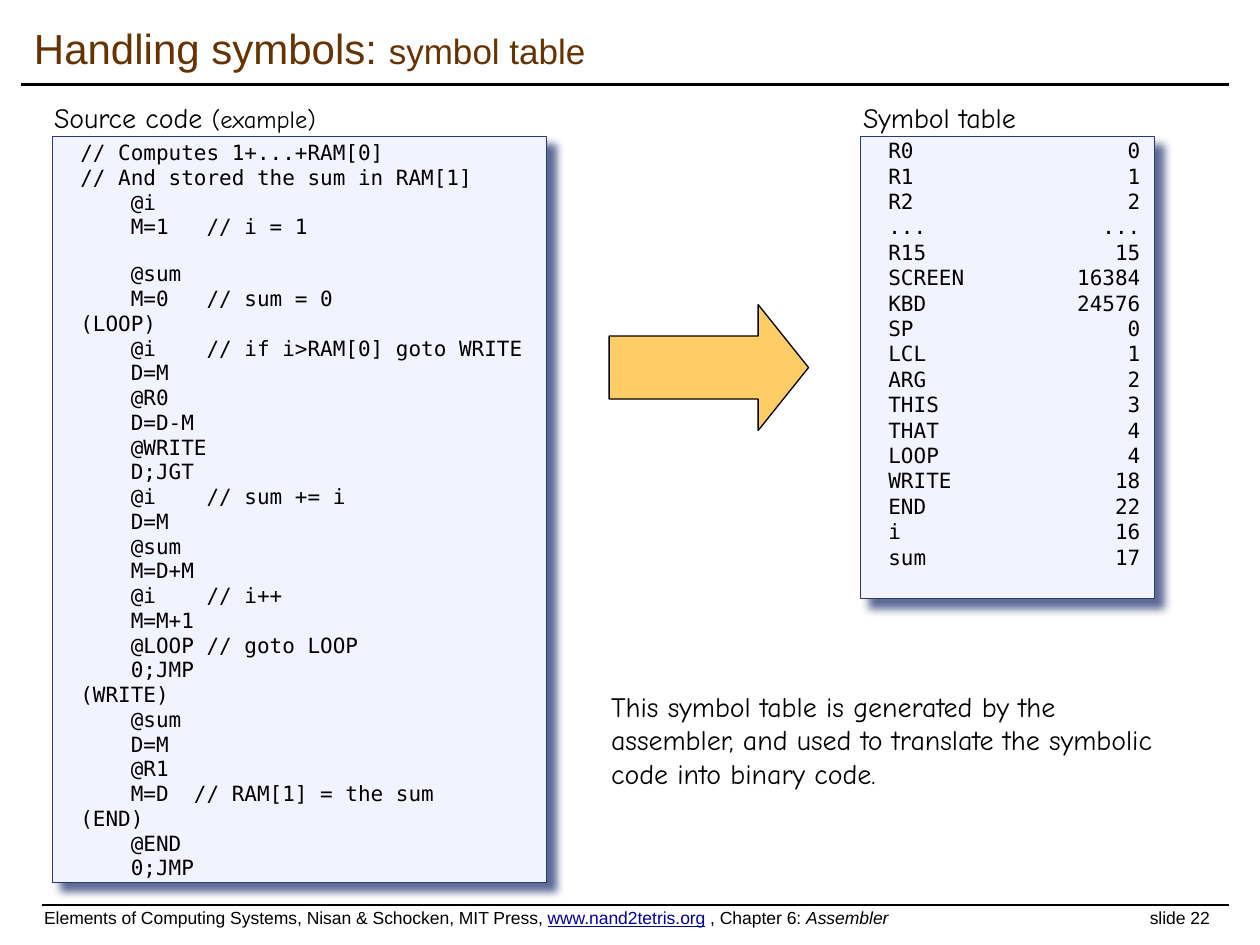
from lxml import etree
from pptx import Presentation
from pptx.dml.color import RGBColor
from pptx.enum.shapes import MSO_CONNECTOR, MSO_SHAPE
from pptx.enum.text import MSO_ANCHOR, MSO_AUTO_SIZE, PP_ALIGN
from pptx.oxml import parse_xml
from pptx.oxml.ns import nsdecls, qn
from pptx.util import Cm, Pt

STRAIGHT = MSO_CONNECTOR.STRAIGHT
RECTANGLE, RIGHT_ARROW = MSO_SHAPE.RECTANGLE, MSO_SHAPE.RIGHT_ARROW
TOP, MIDDLE = MSO_ANCHOR.TOP, MSO_ANCHOR.MIDDLE
LEFT = PP_ALIGN.LEFT
NO_FIT = MSO_AUTO_SIZE.NONE

BLACK = RGBColor(0x00, 0x00, 0x00)
BROWN = RGBColor(0x66, 0x33, 0x00)
NAVY = RGBColor(0x29, 0x39, 0x73)
PALE = RGBColor(0xF3, 0xF3, 0xFF)
GOLD = RGBColor(0xFF, 0xCC, 0x66)
LINK_BLUE = RGBColor(0x00, 0x00, 0x99)
SANS, HAND, MONO = "Arial", "Comic Neue", "DejaVu Sans Mono"

SOURCE_CODE = """// Computes 1+...+RAM[0]
// And stored the sum in RAM[1]
    @i
    M=1   // i = 1
    @sum
    M=0   // sum = 0
(LOOP)
    @i    // if i>RAM[0] goto WRITE
    D=M
    @R0
    D=D-M
    @WRITE
    D;JGT
    @i    // sum += i
    D=M
    @sum
    M=D+M
    @i    // i++
    M=M+1
    @LOOP // goto LOOP
    0;JMP
(WRITE)
    @sum
    D=M
    @R1
    M=D  // RAM[1] = the sum
(END)
    @END
    0;JMP""".splitlines()
SYMBOLS = [
    ("R0", "0"), ("R1", "1"), ("R2", "2"), ("...", "..."), ("R15", "15"),
    ("SCREEN", "16384"), ("KBD", "24576"), ("SP", "0"), ("LCL", "1"),
    ("ARG", "2"), ("THIS", "3"), ("THAT", "4"), ("LOOP", "4"),
    ("WRITE", "18"), ("END", "22"), ("i", "16"), ("sum", "17"),
]


def add_spans(para, spans, font_name, color):
    for text, size in spans:
        span = para.add_run()
        span.text = text
        span.font.name = font_name
        span.font.size = Pt(size)
        span.font.color.rgb = color


def add_right_tab(para, position):
    tabs = etree.SubElement(para._p.get_or_add_pPr(), qn("a:tabLst"))
    etree.SubElement(tabs, qn("a:tab"), pos=str(position), algn="r")


deck = Presentation()
deck.slide_width, deck.slide_height = Cm(25.4), Cm(19.05)
page = deck.slides.add_slide(deck.slide_layouts[5])

title = page.shapes.title
title.left, title.top, title.width, title.height = Cm(0.43), Cm(0.22), Cm(24.33), Cm(1.47)
title.text_frame.auto_size = NO_FIT
title.text_frame.vertical_anchor = MIDDLE
para = title.text_frame.paragraphs[0]
para.alignment = LEFT
add_spans(para, [("Handling symbols: ", 24), ("symbol table", 20)], SANS, BROWN)

for left, top, weight in [(0.43, 1.7, 2), (0.84, 18.24, 1)]:
    rule = page.shapes.add_connector(STRAIGHT, Cm(left), Cm(top), Cm(24.77), Cm(top))
    rule.line.color.rgb = BLACK
    rule.line.width = Pt(weight)
    etree.SubElement(rule._element.spPr, qn("a:effectLst"))

symbol_lines = [f"{name}\t{address}" for name, address in SYMBOLS]
panels = [
    (1.06, 9.96, 15.04, SOURCE_CODE, 0.9, 1.2),
    (17.35, 5.92, 9.32, symbol_lines, 0.8, 3),
]
for left, width, height, lines, line_spacing, gap in panels:
    panel = page.shapes.add_shape(RECTANGLE, Cm(left), Cm(2.75), Cm(width), Cm(height))
    panel.fill.solid()
    panel.fill.fore_color.rgb = PALE
    panel.line.color.rgb = NAVY
    panel.line.width = Pt(0.75)
    panel.shadow.inherit = False
    panel._element.spPr.find(qn("a:effectLst")).append(parse_xml(
        f'<a:outerShdw {nsdecls("a")} blurRad="{Pt(5)}" dist="{Pt(7.1)}" '
        f'dir="2700000" algn="tl" rotWithShape="0"><a:srgbClr val="{NAVY}">'
        '<a:alpha val="75000"/></a:srgbClr></a:outerShdw>'))
    frame = panel.text_frame
    frame.word_wrap = True
    frame.vertical_anchor = TOP
    frame.margin_left, frame.margin_right = Cm(0.56), Cm(0)
    frame.text = "\n".join(lines)
    for index, para in enumerate(frame.paragraphs):
        if lines is symbol_lines:
            add_right_tab(para, Cm(5.08))
        para.alignment = LEFT
        para.line_spacing = line_spacing
        para.space_before = Pt(gap if index else 0)
        for span in para.runs:
            span.font.name = MONO
            span.font.size = Pt(12)
            span.font.color.rgb = BLACK
    if lines is SOURCE_CODE:
        frame.paragraphs[4].space_before = Pt(13.8)

arrow = page.shapes.add_shape(RIGHT_ARROW, Cm(12.28), Cm(6.14), Cm(4.02), Cm(2.54))
arrow.adjustments[0], arrow.adjustments[1] = 0.5, 0.4
arrow.fill.solid()
arrow.fill.fore_color.rgb = GOLD
arrow.line.color.rgb = BLACK
arrow.line.width = Pt(0.75)
arrow.shadow.inherit = False

explanation = ("This symbol table is generated by the assembler, and used to "
               "translate the symbolic code into binary code.")
notes = [
    (0.84, 1.91, 8.43, 1.07, [("Source code ", 16), ("(example)", 14)]),
    (17.15, 1.91, 5.26, 1.07, [("Symbol table", 16)]),
    (12.07, 13.77, 11.86, 2.54, [(explanation, 16)]),
]
for left, top, width, height, spans in notes:
    box = page.shapes.add_textbox(Cm(left), Cm(top), Cm(width), Cm(height))
    box.text_frame.word_wrap = True
    add_spans(box.text_frame.paragraphs[0], spans, HAND, BLACK)

footer = page.shapes.add_textbox(Cm(0.64), Cm(18.16), Cm(24.13), Cm(0.69))
footer.text_frame.word_wrap = True
footer.text_frame.vertical_anchor = MIDDLE
para = footer.text_frame.paragraphs[0]
add_right_tab(para, Cm(23.5))
footer_texts = [
    "Elements of Computing Systems, Nisan & Schocken, MIT Press, ",
    "www.nand2tetris.org", " , Chapter 6: ", "Assembler", "\tslide 22",
]
add_spans(para, [(text, 10) for text in footer_texts], SANS, BLACK)
address, chapter = para.runs[1], para.runs[3]
address.font.color.rgb = LINK_BLUE
address.font.underline = True
chapter.font.italic = True

deck.save("out.pptx")
